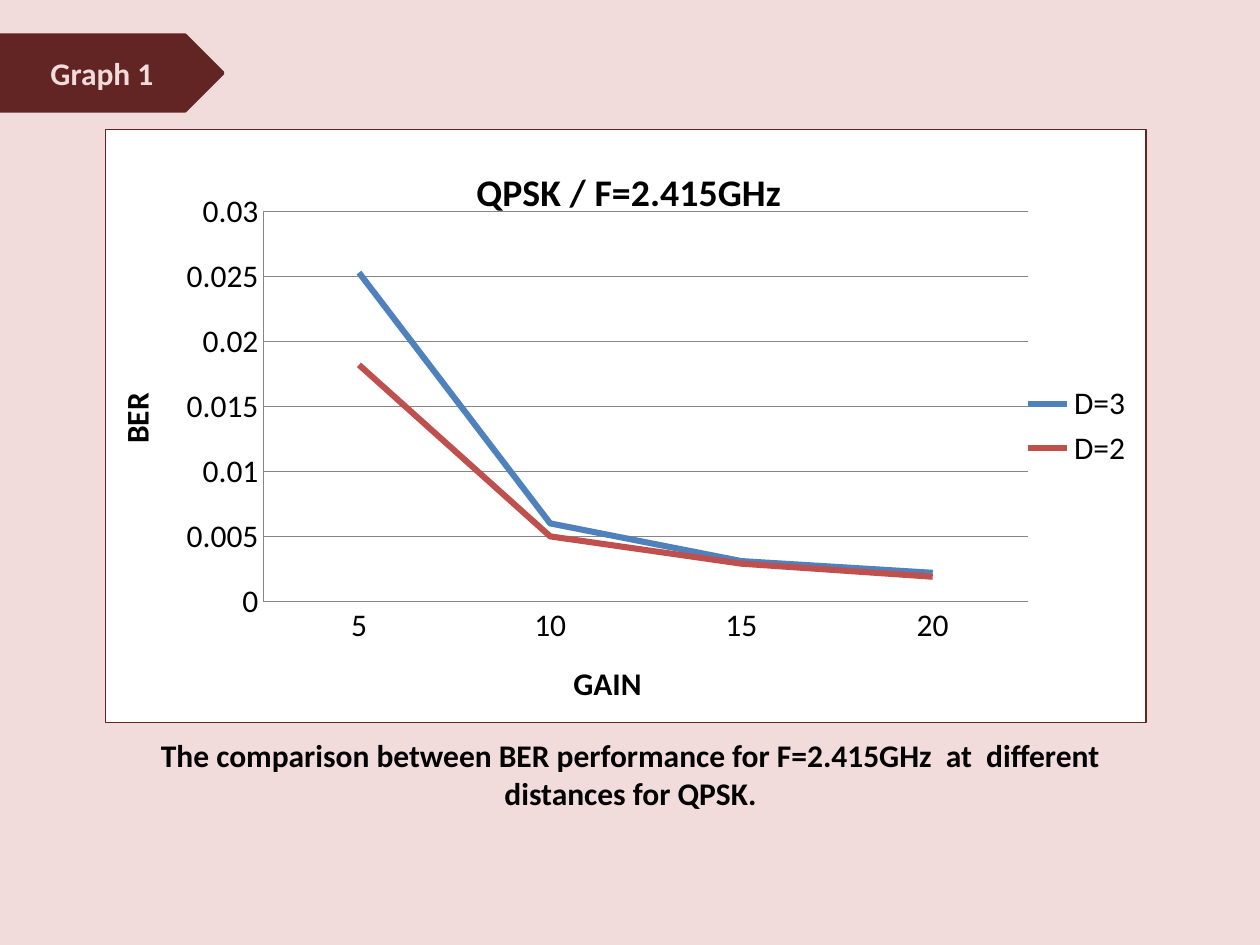
from lxml import etree
from pptx import Presentation
from pptx.chart.data import CategoryChartData
from pptx.dml.color import RGBColor
from pptx.enum.chart import XL_CHART_TYPE, XL_LEGEND_POSITION, XL_MARKER_STYLE, XL_TICK_MARK
from pptx.enum.shapes import MSO_SHAPE
from pptx.enum.text import MSO_ANCHOR, PP_ALIGN
from pptx.oxml.ns import qn
from pptx.util import Pt

COLORS = {
    "background": "F2DCDB",
    "maroon": "632523",
    "white": "FFFFFF",
    "black": "000000",
    "grid": "868686",
}
SERIES = [
    ("D=3", (0.0253, 0.006, 0.0031, 0.0022), "4F81BD"),
    ("D=2", (0.0182, 0.005, 0.0029, 0.0019), "C0504D"),
]


def color(name):
    return RGBColor.from_string(COLORS.get(name, name))


def format_font(font, color_name="black", **changes):
    values = {"name": "Calibri", "size": Pt(18), "bold": True, **changes}
    for attribute, value in values.items():
        setattr(font, attribute, value)
    font.color.rgb = color(color_name)


def format_line(line, color_name, width):
    line.color.rgb = color(color_name)
    line.width = Pt(width)


def write_text(shape, text, color_name, anchor):
    frame = shape.text_frame
    frame.word_wrap = True
    frame.vertical_anchor = anchor
    paragraph = frame.paragraphs[0]
    paragraph.text = text
    paragraph.alignment = PP_ALIGN.CENTER
    format_font(paragraph.runs[0].font, color_name)


def add_filled_shape(slide, kind, box, fill):
    shape = slide.shapes.add_shape(kind, *map(Pt, box))
    shape.shadow.inherit = False
    shape.fill.solid()
    shape.fill.fore_color.rgb = color(fill)
    shape.line.fill.background()
    return shape


def set_layout(parent, **values):
    """Give a chart part a manual layout in fractions of the chart."""
    layout = parent.find(qn("c:layout"))
    if layout is None:
        layout = etree.Element(qn("c:layout"))
        text = parent.find(qn("c:tx"))
        parent.insert(0 if text is None else 1, layout)
    manual = etree.SubElement(layout, qn("c:manualLayout"))
    for tag, value in values.items():
        etree.SubElement(manual, qn(f"c:{tag}")).set("val", str(value))


def format_chart_fill(chart):
    properties = etree.Element(qn("c:spPr"))
    fill = etree.SubElement(properties, qn("a:solidFill"))
    etree.SubElement(fill, qn("a:srgbClr")).set("val", COLORS["white"])
    border = etree.SubElement(properties, qn("a:ln"), w=str(Pt(0.75)))
    fill = etree.SubElement(border, qn("a:solidFill"))
    etree.SubElement(fill, qn("a:srgbClr")).set("val", COLORS["maroon"])
    chart.element.find(qn("c:chart")).addnext(properties)


def add_title(owner, text, size):
    frame = owner.text_frame
    frame.text = text
    format_font(frame.paragraphs[0].runs[0].font, size=Pt(size))


def format_axis(axis, title):
    add_title(axis.axis_title, title, 18)
    axis.major_tick_mark = axis.minor_tick_mark = XL_TICK_MARK.NONE
    format_line(axis.format.line, "grid", 0.75)
    format_font(axis.tick_labels.font, bold=False)


def add_ber_chart(slide, box):
    data = CategoryChartData()
    data.categories = ["5", "10", "15", "20"]
    for name, values, _ in SERIES:
        data.add_series(name, values)
    chart = slide.shapes.add_chart(XL_CHART_TYPE.LINE, *map(Pt, box), data).chart
    format_font(chart.font, bold=False)
    format_chart_fill(chart)

    # Title and plot area
    chart.has_title = True
    add_title(chart.chart_title, "QPSK / F=2.415GHz", 21.6)
    set_layout(chart.chart_title._element, xMode="edge", yMode="edge", x=0.35, y=0.05)
    plot_area = chart.element.find(".//" + qn("c:plotArea"))
    set_layout(plot_area, layoutTarget="inner", xMode="edge", yMode="edge",
               x=0.152, y=0.139, w=0.735, h=0.657)

    # Axes
    format_axis(chart.category_axis, "GAIN")
    axis = chart.value_axis
    format_axis(axis, "BER")
    axis.minimum_scale, axis.maximum_scale, axis.major_unit = 0, 0.03, 0.005
    axis.has_major_gridlines = True
    format_line(axis.major_gridlines.format.line, "grid", 0.75)

    # Legend and series
    chart.has_legend = True
    chart.legend.position = XL_LEGEND_POSITION.RIGHT
    chart.legend.include_in_layout = False
    format_font(chart.legend.font, bold=False)
    chart.plots[0].vary_by_categories = False
    for series, (_, _, line_color) in zip(chart.plots[0].series, SERIES):
        series.smooth = False
        series.marker.style = XL_MARKER_STYLE.NONE
        format_line(series.format.line, line_color, 3.5)


def add_caption(slide, box):
    caption = slide.shapes.add_textbox(*map(Pt, box))
    text = ("The comparison between BER performance for F=2.415GHz  at  different "
            "distances for QPSK.")
    write_text(caption, text, "black", MSO_ANCHOR.TOP)


def add_tag(slide, box):
    tag = add_filled_shape(slide, MSO_SHAPE.PENTAGON, box, "maroon")
    format_line(tag.line, "maroon", 2)
    write_text(tag, "Graph 1", "background", MSO_ANCHOR.MIDDLE)


def main():
    presentation = Presentation()
    presentation.slide_width, presentation.slide_height = Pt(720), Pt(540)
    slide = presentation.slides.add_slide(presentation.slide_layouts[6])
    add_filled_shape(slide, MSO_SHAPE.RECTANGLE, (0, 0, 720, 540), "background")
    add_ber_chart(slide, (59.76, 73.44, 595.44, 339.84))
    add_caption(slide, (62.64, 416.88, 595.44, 54))
    add_tag(slide, (0, 20.16, 127.44, 43.2))
    presentation.save("out.pptx")


if __name__ == "__main__":
    main()
